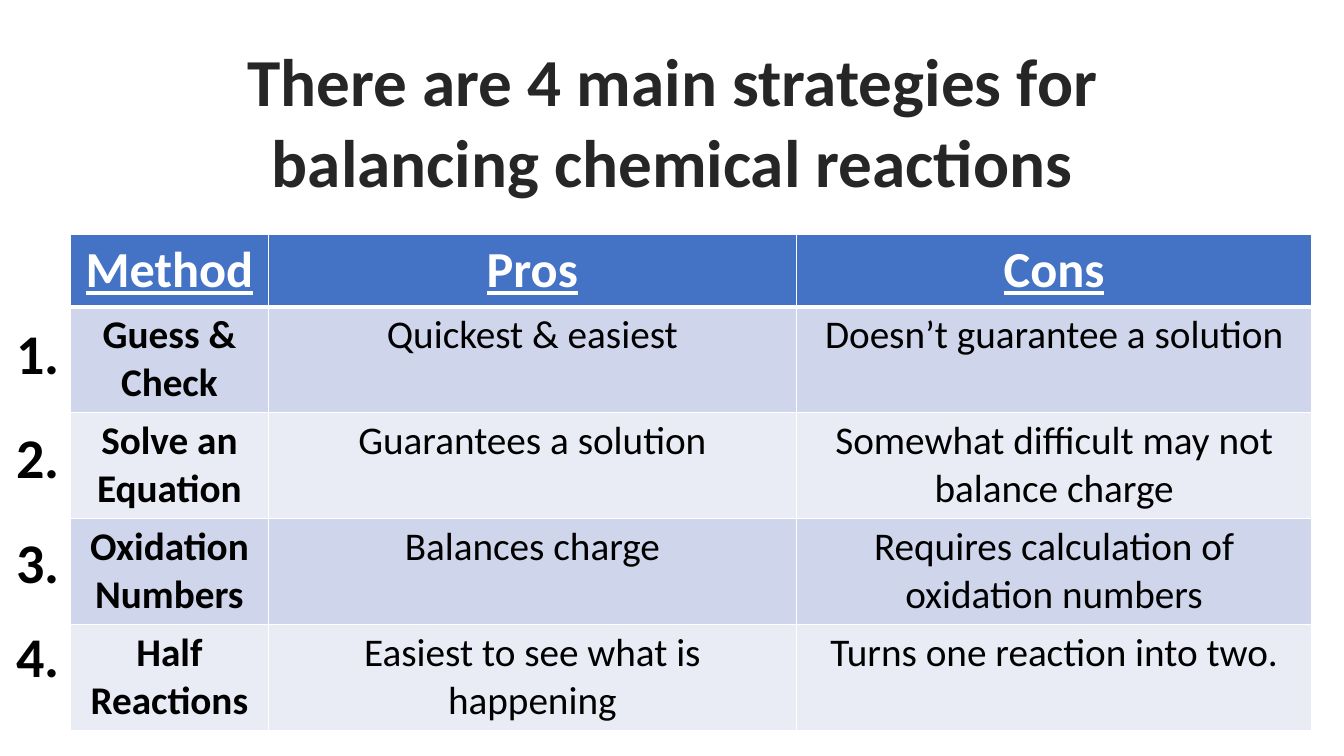
from dataclasses import dataclass

from lxml.etree import SubElement
from pptx import Presentation
from pptx.dml.color import RGBColor
from pptx.enum.text import MSO_ANCHOR, PP_ALIGN
from pptx.oxml.ns import qn
from pptx.util import Inches, Pt


@dataclass(frozen=True)
class Theme:
    font: str = "Calibri"
    title_color: str = "262626"
    ink: str = "000000"
    paper: str = "FFFFFF"
    header_fill: str = "4472C4"
    bands: tuple = ("CFD5EA", "E9EBF5")
    title_size: int = 48
    number_size: int = 40
    header_size: int = 36
    body_size: int = 28
    rule: int = 1
    header_rule: int = 3


THEME = Theme()
TITLE = "There are 4 main strategies for balancing chemical reactions"
HEADINGS = ("Method", "Pros", "Cons")
STRATEGIES = (
    ("Guess & Check", "Quickest & easiest", "Doesn’t guarantee a solution"),
    ("Solve an Equation", "Guarantees a solution", "Somewhat difficult may not balance charge"),
    ("Oxidation Numbers", "Balances charge", "Requires calculation of oxidation numbers"),
    ("Half Reactions", "Easiest to see what is happening", "Turns one reaction into two."),
)
TABLE_LEFT, TABLE_TOP = 0.7, 2.33
COLUMN_WIDTHS = (1.96, 5.24, 5.11)
HEADER_HEIGHT, ROW_HEIGHT = 0.7, 1.03
NUMBER_DROPS = (0.08, 0.08, 0.09, 0)


def write(frame, text, size, color, bold=False, underline=False):
    frame.text = text
    para = frame.paragraphs[0]
    para.alignment = PP_ALIGN.CENTER
    para.line_spacing = 1.0
    font = para.font
    font.name, font.size = THEME.font, Pt(size)
    font.bold, font.underline = bold, underline
    font.color.rgb = RGBColor.from_string(color)


def add_title(page):
    title = page.shapes.title
    title.left, title.top = Inches(1.92), Inches(0.34)
    title.width, title.height = Inches(9.5), Inches(1.72)
    frame = title.text_frame
    frame.word_wrap = True
    frame.vertical_anchor = MSO_ANCHOR.TOP
    write(frame, TITLE, THEME.title_size, THEME.title_color, bold=True)


def border_cell(cell, bottom):
    properties = cell._tc.get_or_add_tcPr()
    widths = {"a:lnL": THEME.rule, "a:lnR": THEME.rule, "a:lnT": THEME.rule, "a:lnB": bottom}
    for tag, width in widths.items():
        line = SubElement(properties, qn(tag), w=str(Pt(width)))
        fill = SubElement(line, qn("a:solidFill"))
        SubElement(fill, qn("a:srgbClr"), val=THEME.paper)


def style_cell(cell, fill, bottom):
    border_cell(cell, bottom)
    cell.fill.solid()
    cell.fill.fore_color.rgb = RGBColor.from_string(fill)


def add_strategy_table(page):
    height = HEADER_HEIGHT + ROW_HEIGHT * len(STRATEGIES)
    table = page.shapes.add_table(
        len(STRATEGIES) + 1, len(HEADINGS), Inches(TABLE_LEFT), Inches(TABLE_TOP),
        Inches(sum(COLUMN_WIDTHS)), Inches(height)).table
    for column, width in zip(table.columns, COLUMN_WIDTHS):
        column.width = Inches(width)
    for index, row in enumerate(table.rows):
        row.height = Inches(ROW_HEIGHT if index else HEADER_HEIGHT)

    for column, heading in enumerate(HEADINGS):
        cell = table.cell(0, column)
        style_cell(cell, THEME.header_fill, THEME.header_rule)
        write(cell.text_frame, heading, THEME.header_size, THEME.paper, bold=True, underline=True)
    for index, strategy in enumerate(STRATEGIES):
        for column, text in enumerate(strategy):
            cell = table.cell(index + 1, column)
            style_cell(cell, THEME.bands[index % 2], THEME.rule)
            write(cell.text_frame, text, THEME.body_size, THEME.ink, bold=column == 0)


def add_row_number(page, index, drop):
    top = TABLE_TOP + HEADER_HEIGHT + index * ROW_HEIGHT + drop
    box = page.shapes.add_textbox(Inches(0.06), Inches(top), Inches(0.63), Inches(0.77))
    box.text_frame.word_wrap = False
    write(box.text_frame, f"{index + 1}.", THEME.number_size, THEME.ink, bold=True)


def main():
    deck = Presentation()
    deck.slide_width, deck.slide_height = Inches(13.33), Inches(7.5)
    page = deck.slides.add_slide(deck.slide_layouts.get_by_name("Title Only"))
    add_title(page)
    add_strategy_table(page)
    for index, drop in enumerate(NUMBER_DROPS):
        add_row_number(page, index, drop)
    deck.save("out.pptx")


if __name__ == "__main__":
    main()
